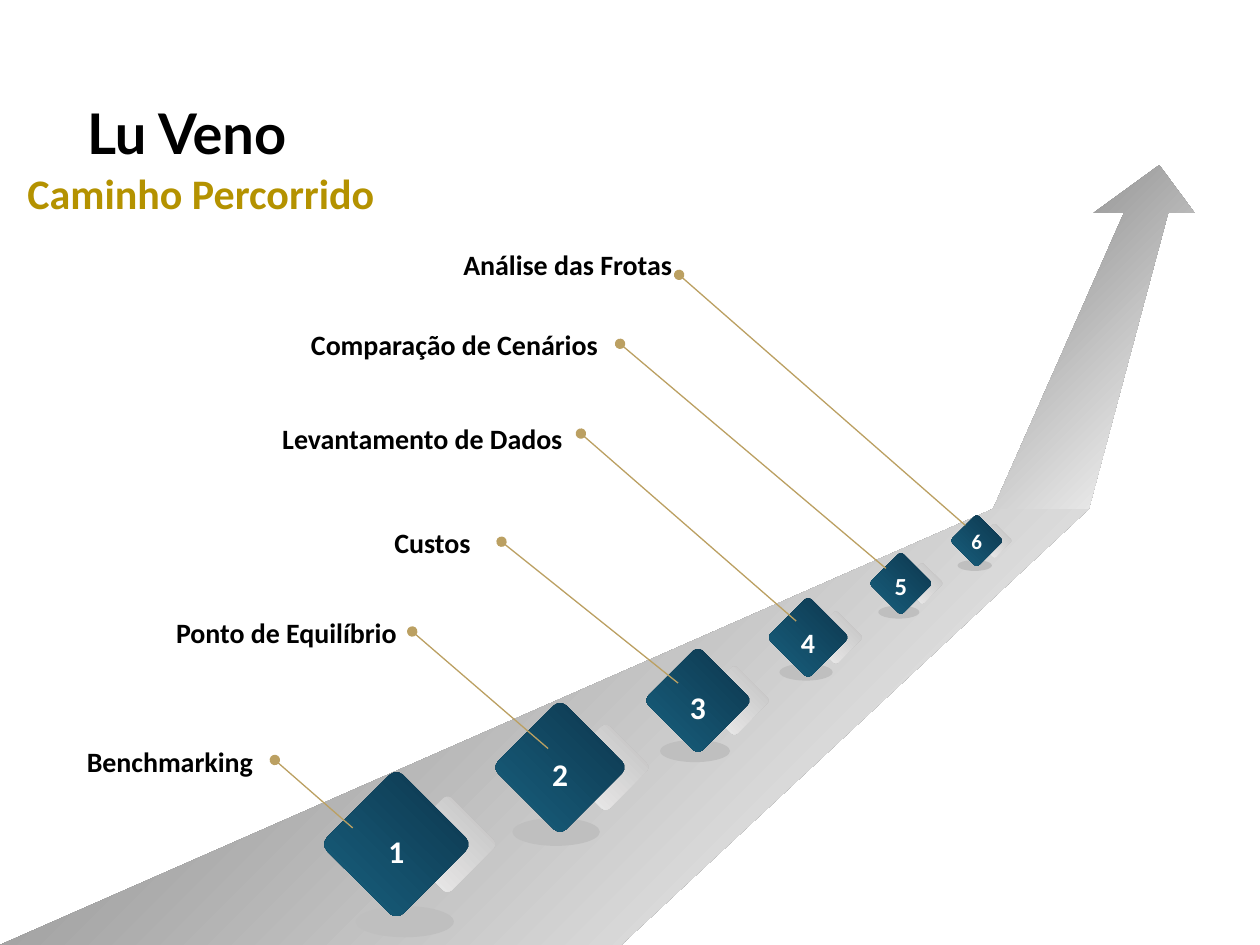
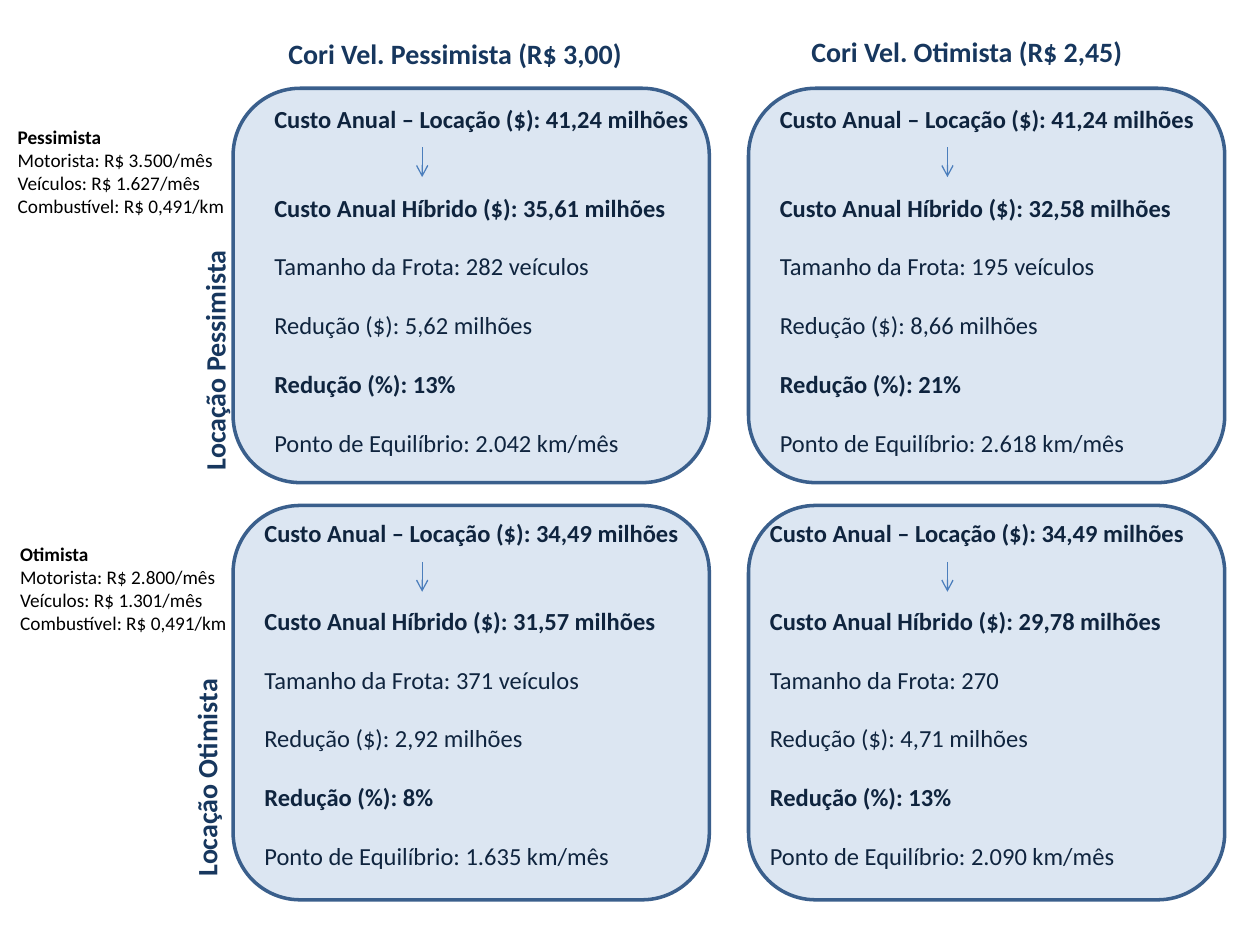
from lxml import etree
from pptx import Presentation
from pptx import util as u
from pptx.dml.color import RGBColor
from pptx.enum import shapes as s, text as t
from pptx.oxml import ns

Cm = u.Cm

BLACK = RGBColor(0x00, 0x00, 0x00)
WHITE = RGBColor(0xFF, 0xFF, 0xFF)
GOLD = RGBColor(0xB4, 0x92, 0x00)
SAND = RGBColor(0xBB, 0xA0, 0x62)
NAVY = RGBColor(0x17, 0x37, 0x5E)
INK = RGBColor(0x0F, 0x24, 0x3E)
PALE = RGBColor(0xDC, 0xE6, 0xF2)
EDGE = RGBColor(0x3A, 0x5F, 0x8C)
BLUE = RGBColor(0x4B, 0x7E, 0xBC)
SHADE = RGBColor(0xBF, 0xBF, 0xBF)
ROAD = (RGBColor(0x80, 0x80, 0x80), WHITE)
SIDE = (RGBColor(0xBF, 0xBE, 0xBE), RGBColor(0xF2, 0xF2, 0xF2))
TEAL = (RGBColor(0x0C, 0x34, 0x4C), RGBColor(0x19, 0x62, 0x7F))

LEFT, MID = t.PP_ALIGN.LEFT, t.PP_ALIGN.CENTER
FRAME = {"auto_size": t.MSO_AUTO_SIZE.NONE, "vertical_anchor": t.MSO_ANCHOR.TOP}
PARA = {"alignment": LEFT, "line_spacing": 1.0, "space_before": u.Pt(0)}

ROAD_PTS = [(0, 19.05), (20.02, 10.26), (21.95, 10.26), (12.52, 19.05)]
HEAD_PTS = [(24.08, 4.29), (23.37, 3.33), (22.05, 4.29), (22.66, 4.29),
            (20.02, 10.26), (21.95, 10.26), (23.55, 4.29)]
# centre x, centre y, side, offset of the ground shadow, number size
STEPS = [
    (7.99, 17.02, 2.17, (0.17, 1.56), 18),
    (11.29, 15.47, 1.94, (-0.08, 1.3), 18),
    (14.07, 14.12, 1.55, (-0.06, 1.02), 18),
    (16.29, 12.85, 1.18, (-0.04, 0.7), 16),
    (18.16, 11.76, 0.91, (-0.04, 0.58), 14),
    (19.69, 10.9, 0.76, (-0.04, 0.5), 12),
]
# label, left, top, width, line start, line end
CALLS = [
    ("Benchmarking", 1.5, 14.55, 5.21, (5.54, 15.32), (7.11, 16.69)),
    ("Ponto de Equilíbrio", 3.3, 11.94, 6.2, (8.31, 12.73), (11.05, 15.09)),
    ("Custos", 7.7, 10.13, 3, (10.11, 10.92), (13.67, 13.77)),
    ("Levantamento de Dados", 5.44, 8.03, 7.01, (11.71, 8.74), (16.05, 12.52)),
    ("Comparação de Cenários", 6.02, 6.15, 8, (12.5, 6.93), (17.86, 11.46)),
    ("Análise das Frotas", 9.09, 4.52, 8, (13.69, 5.54), (19.46, 10.59)),
]

HEADS = [
    ("Cori Vel. Pessimista (R$ 3,00)", (5.56, 0.61, 8.64, 0.94)),
    ("Cori Vel. Otimista (R$ 2,45)", (16.1, 0.56, 6.99, 0.94)),
]
# name, driver, vehicles, label width, yearly rent, then one tuple per card
ROWS = [
    ("Pessimista", "3.500", "1.627", 5, "41,24", [
        ("35,61", "282 veículos", "5,62", "13", "2.042"),
        ("32,58", "195 veículos", "8,66", "21", "2.618")]),
    ("Otimista", "2.800", "1.301", 4.67, "34,49", [
        ("31,57", "371 veículos", "2,92", "8", "1.635"),
        ("29,78", "270", "4,71", "13", "2.090")]),
]
GAPS = [0, 33.6, 16.8, 16.8, 16.8, 16.8]


def apply(item, fmt):
    for key, val in fmt.items():
        setattr(item, key, val)


def place(shape, box):
    apply(shape, dict(zip(("left", "top", "width", "height"), map(Cm, box))))


def write(shape, lines, size, tint, bold=(0,), face="Calibri", gaps=None,
          wrap=True, **para):
    """Fill a shape with lines; bold holds the indexes of the bold ones."""
    frame = shape.text_frame
    apply(frame, {**FRAME, "word_wrap": wrap})
    for i, line in enumerate(lines):
        p = frame.paragraphs[0] if i == 0 else frame.add_paragraph()
        apply(p, {**PARA, **para})
        if gaps:
            p.space_before = u.Pt(gaps[i])
        run = p.add_run()
        run.text = line
        apply(run.font, {"name": face, "size": u.Pt(size), "bold": i in bold})
        run.font.color.rgb = tint
        props = p._p.get_or_add_pPr()
        props.set("marL", "0")
        props.set("indent", "0")
        etree.SubElement(props, ns.qn("a:buNone"))


def label(area, box, lines, size, tint, **fmt):
    shape = area.add_textbox(*map(Cm, box))
    write(shape, lines, size, tint, **fmt)
    return shape


def paint(shape, fill, angle=0):
    """Fill with one colour, or with a pair as a clockwise gradient."""
    shape.shadow.inherit = False
    shape.line.fill.background()
    if isinstance(fill, RGBColor):
        shape.fill.solid()
        shape.fill.fore_color.rgb = fill
        return
    shape.fill.gradient()
    shape.fill.gradient_angle = 360 - angle
    for stop, tint, pos in zip(shape.fill.gradient_stops, fill, (0, 1)):
        stop.color.rgb = tint
        stop.position = pos


def block(area, kind, x, y, w, h, fill, turn=0, angle=0):
    """Add a preset shape centred on x, y."""
    shape = area.add_shape(kind, *map(Cm, (x - w / 2, y - h / 2, w, h)))
    paint(shape, fill, angle)
    shape.rotation = turn
    if kind == s.MSO_SHAPE.ROUNDED_RECTANGLE:
        shape.adjustments[0] = 0.09
    return shape


def link(area, start, end, tint, tip, kind):
    line = area.add_connector(s.MSO_CONNECTOR.STRAIGHT, *map(Cm, start + end))
    line.line.width = u.Pt(0.75)
    line.line.color.rgb = tint
    props = line.element.spPr
    etree.SubElement(props.find(ns.qn("a:ln")), ns.qn("a:" + tip), type=kind)
    etree.SubElement(props, ns.qn("a:effectLst"))


def outline(area, pts):
    pts = [(Cm(x), Cm(y)) for x, y in pts]
    form = area.build_freeform(*pts[0])
    form.add_line_segments(pts[1:], close=True)
    paint(form.convert_to_shape(), ROAD, 45)


def step(area, num, x, y, side, drop, size):
    """Draw a numbered diamond centred on x, y."""
    box = area.add_group_shape().shapes
    tile = s.MSO_SHAPE.ROUNDED_RECTANGLE
    block(box, s.MSO_SHAPE.OVAL, x + drop[0], y + drop[1],
          0.91 * side, 0.29 * side, SHADE)
    block(box, tile, x + 0.475 * side, y, 0.66 * side, 0.66 * side,
          SIDE, 315, 180)
    block(box, tile, x, y, side, side, TEAL, 45, 90)
    spot = (x - side / 2, y - 0.36 - 0.022 * size, side, 1.2)
    text = label(box, spot, [str(num)], size, WHITE,
                 alignment=MID, line_spacing=1.5)
    apply(text.text_frame, {"margin_left": 0, "margin_right": 0})


def journey(deck):
    slide = deck.slides.add_slide(deck.slide_layouts[0])
    area = slide.shapes
    head, sub = slide.placeholders
    place(head, (1.5, 1.85, 5, 1.63))
    write(head, ["Lu Veno"], 32, BLACK, face="Lato")
    place(sub, (0.3, 3.25, 7.8, 1.27))
    write(sub, ["Caminho Percorrido"], 24, GOLD)
    outline(area, ROAD_PTS)
    outline(area, HEAD_PTS)
    for num, data in enumerate(STEPS, 1):
        step(area, num, *data)
    for name, x, y, w, start, end in CALLS:
        link(area, start, end, SAND, "headEnd", "oval")
        label(area, (x, y, w, 1.17), [name], 16, BLACK, line_spacing=1.5)


def card(area, row, col, x, y, rent, data):
    """Draw one scenario card with its top left corner at x, y."""
    w, h = 9.6, 7.95
    back = block(area, s.MSO_SHAPE.ROUNDED_RECTANGLE,
                 x + w / 2, y + h / 2, w, h, PALE)
    back.adjustments[0] = 0.17
    back.line.color.rgb = EDGE
    back.line.width = u.Pt(2)
    cost, fleet, cut, rate, even = data
    lines = [
        f"Custo Anual – Locação ($): {rent} milhões",
        f"Custo Anual Híbrido ($): {cost} milhões",
        f"Tamanho da Frota: {fleet}",
        f"Redução ($): {cut} milhões",
        f"Redução (%): {rate}%",
        f"Ponto de Equilíbrio: {even} km/mês",
    ]
    box = (x + 0.58 - 0.2 * (row + col), y + 0.2 - 0.08 * row, 9.22, 7.44)
    label(area, box, lines, 14, INK, bold=(0, 1, 4), gaps=GAPS)
    ax, ay = x + 3.81 + 0.2 * col, y + 1.19 - 0.05 * row
    link(area, (ax, ay), (ax, ay + 0.6), BLUE, "tailEnd", "arrow")


def costs(deck):
    slide = deck.slides.add_slide(deck.slide_layouts[4])
    area = slide.shapes
    title, *slots = slide.placeholders
    title.element.getparent().remove(title.element)
    for slot, (name, box) in zip(slots[::2], HEADS):
        place(slot, box)
        write(slot, [name], 16, NAVY)
    for row, (name, pay, car, wide, rent, cards) in enumerate(ROWS):
        note, top = slots[2 * row + 1], 8.41 * row
        place(note, (0.1 + 0.05 * row, 2.39 + top, 4.8, 2.13))
        write(note, [name, f"Motorista: R$ {pay}/mês",
                     f"Veículos: R$ {car}/mês",
                     "Combustível: R$ 0,491/km"], 11, BLACK)
        side = label(area, (1.83, 6.76 + 8.35 * row, wide, 0.94),
                     [f"Locação {name}"], 16, NAVY, wrap=False)
        side.rotation = 270
        for col, data in enumerate(cards):
            card(area, row, col, 4.7 + 10.39 * col, 1.78 + top, rent, data)


def main():
    deck = Presentation()
    deck.slide_width, deck.slide_height = Cm(25.4), Cm(19.05)
    journey(deck)
    costs(deck)
    deck.save("out.pptx")


if __name__ == "__main__":
    main()
